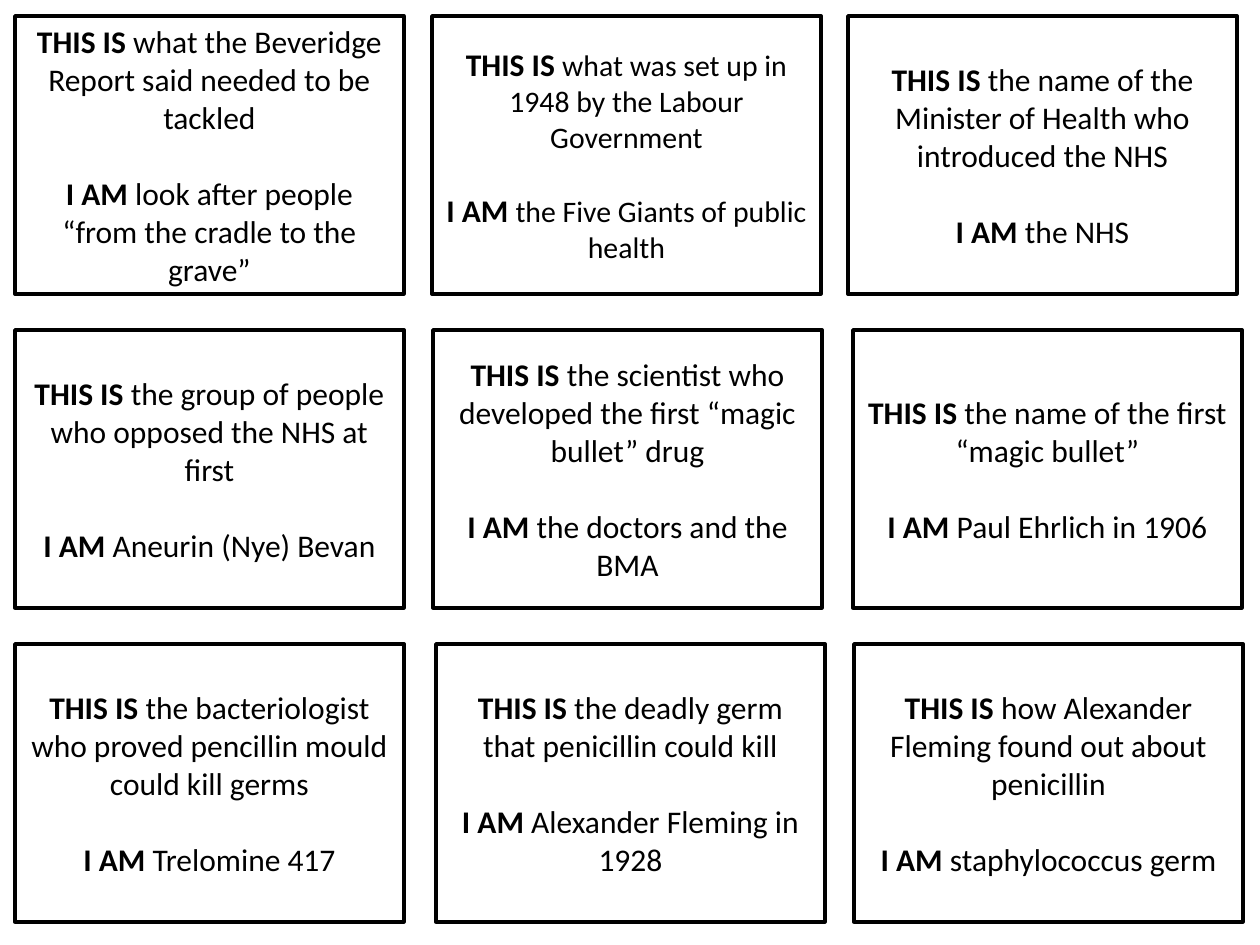
from pptx import Presentation
from pptx.dml.color import RGBColor
from pptx.enum.shapes import MSO_SHAPE
from pptx.enum.text import MSO_ANCHOR, PP_ALIGN
from pptx.util import Pt

RECT = MSO_SHAPE.RECTANGLE
MIDDLE = MSO_ANCHOR.MIDDLE
CENTER = PP_ALIGN.CENTER
BLACK = RGBColor(0, 0, 0)
WHITE = RGBColor(255, 255, 255)
FONT = "Calibri"
LEAD = 1.22  # line height of the font, per point of size

PX = 914400 / 126
CARD_W, CARD_H = 389, 278
TOP, STEP = 16, 314

# Each row: cards of (left, clue, answer, text size)
ROWS = [
    [
        (15, "what the Beveridge Report said needed to be tackled",
         "look after people “from the cradle to the grave”", 18),
        (432, "what was set up in 1948 by the Labour Government",
         "the Five Giants of public health", 17),
        (848, "the name of the Minister of Health who introduced the NHS",
         "the NHS", 18),
    ],
    [
        (15, "the group of people who opposed the NHS at first",
         "Aneurin (Nye) Bevan", 18),
        (433, "the scientist who developed the first “magic bullet” drug",
         "the doctors and the BMA", 18),
        (853, "the name of the first “magic bullet”",
         "Paul Ehrlich in 1906", 18),
    ],
    [
        (15, "the bacteriologist who proved pencillin mould could kill germs",
         "Trelomine 417", 18),
        (436, "the deadly germ that penicillin could kill",
         "Alexander Fleming in 1928", 18),
        (854, "how Alexander Fleming found out about penicillin",
         "staphylococcus germ", 18),
    ],
]


def px(n):
    return round(n * PX)


def add_run(para, text, size=18, bold=False):
    run = para.add_run()
    run.text = text
    font = run.font
    font.name, font.size, font.bold = FONT, Pt(size), bold
    font.color.rgb = BLACK


def add_card(slide, left, top, clue, answer, size):
    card = slide.shapes.add_shape(RECT, px(left), px(top), px(CARD_W), px(CARD_H))
    card.shadow.inherit = False
    card.fill.solid()
    card.fill.fore_color.rgb = WHITE
    card.line.color.rgb = BLACK
    card.line.width = Pt(2)
    frame = card.text_frame
    frame.word_wrap = True
    frame.vertical_anchor = MIDDLE
    first, last = frame.paragraphs[0], frame.add_paragraph()
    last.space_before = Pt(round(size * LEAD))
    for para, label, text in ((first, "THIS IS ", clue), (last, "I AM ", answer)):
        para.alignment = CENTER
        add_run(para, label, bold=True)
        add_run(para, text, size=size)


def main():
    deck = Presentation()
    deck.slide_width, deck.slide_height = px(1260), px(945)
    slide = deck.slides.add_slide(deck.slide_layouts[6])
    for i, row in enumerate(ROWS):
        for left, clue, answer, size in row:
            add_card(slide, left, TOP + i * STEP, clue, answer, size)
    deck.save("out.pptx")


if __name__ == "__main__":
    main()
